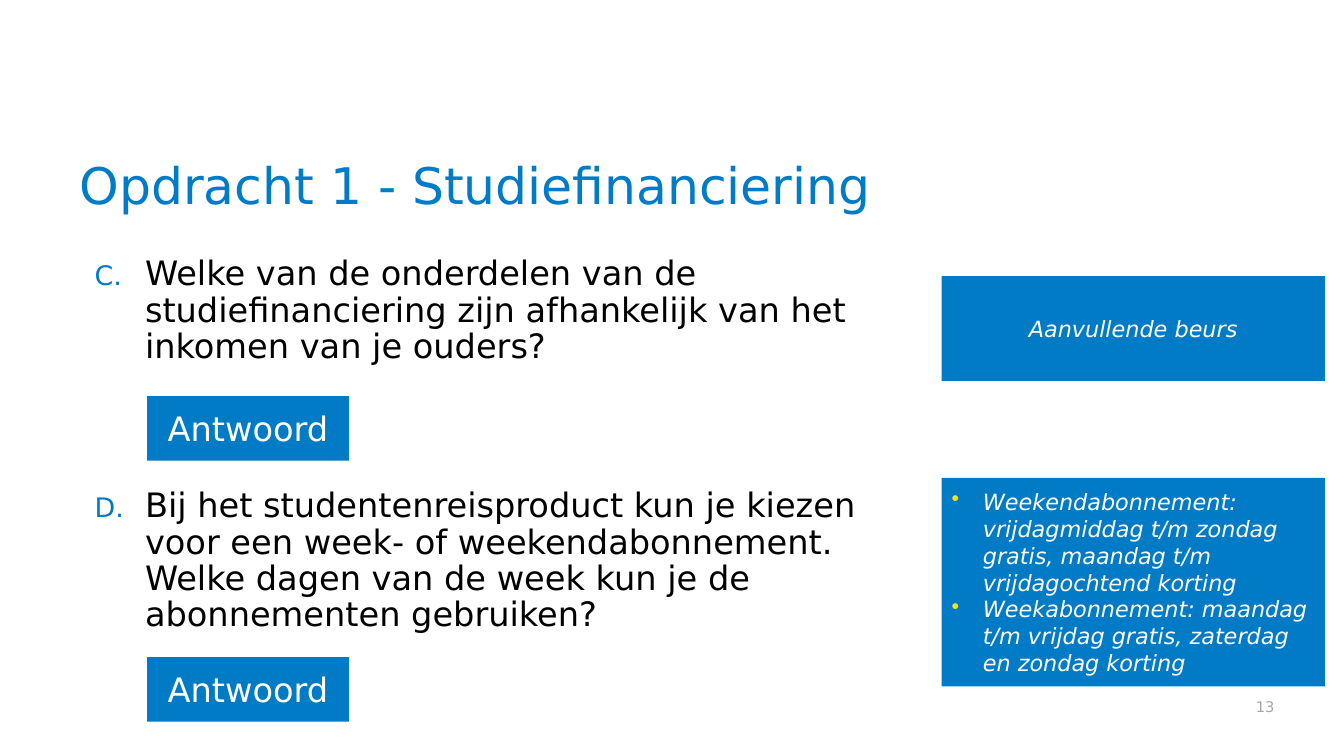
from lxml import etree
from pptx import Presentation
from pptx.dml.color import RGBColor
from pptx.enum.shapes import MSO_SHAPE
from pptx.enum.text import MSO_ANCHOR, PP_ALIGN
from pptx.oxml.ns import qn
from pptx.util import Inches, Pt

RECTANGLE = MSO_SHAPE.RECTANGLE
TOP, MIDDLE, BOTTOM = MSO_ANCHOR.TOP, MSO_ANCHOR.MIDDLE, MSO_ANCHOR.BOTTOM
LEFT, CENTER, RIGHT = PP_ALIGN.LEFT, PP_ALIGN.CENTER, PP_ALIGN.RIGHT

BLUE = RGBColor(0x01, 0x7B, 0xC6)
TITLE_BLUE = RGBColor(0x00, 0x7B, 0xC7)
YELLOW = RGBColor(0xF9, 0xE1, 0x1E)
GREY = RGBColor(0xA6, 0xA6, 0xA6)
BLACK = RGBColor(0x00, 0x00, 0x00)
WHITE = RGBColor(0xFF, 0xFF, 0xFF)
FONT = "DejaVu Sans"

QUESTIONS = [
    "Welke van de onderdelen van de studiefinanciering zijn afhankelijk van "
    "het inkomen van je ouders?",
    "Bij het studentenreisproduct kun je kiezen voor een week- of "
    "weekendabonnement. Welke dagen van de week kun je de abonnementen gebruiken?",
]
SUBSCRIPTIONS = [
    "Weekendabonnement: vrijdagmiddag t/m zondag gratis, maandag t/m "
    "vrijdagochtend korting",
    "Weekabonnement: maandag t/m vrijdag gratis, zaterdag en zondag korting",
]


def add_marker(paragraph, color, indent, hanging, tag, size=100, **attributes):
    """Give a paragraph a hanging bullet or number."""
    properties = paragraph._p.get_or_add_pPr()
    properties.set("marL", str(Inches(indent)))
    properties.set("indent", str(-Inches(hanging)))
    marker_color = etree.SubElement(properties, qn("a:buClr"))
    etree.SubElement(marker_color, qn("a:srgbClr"), val=str(color))
    etree.SubElement(properties, qn("a:buSzPct"), val=str(size * 1000))
    etree.SubElement(properties, qn(tag), **attributes)


def write(frame, lines, size, color, align=LEFT, anchor=TOP, italic=False,
          spacing=None, gap=0, marker=None):
    frame.word_wrap = True
    frame.vertical_anchor = anchor
    for index, line in enumerate(lines):
        paragraph = frame.add_paragraph() if index else frame.paragraphs[0]
        paragraph.text = line
        if marker:
            add_marker(paragraph, **marker)
        paragraph.alignment = align
        paragraph.line_spacing = spacing
        if index and gap:
            paragraph.space_before = Pt(gap)
        font = paragraph.font
        font.name, font.size, font.italic = FONT, Pt(size), italic
        font.color.rgb = color


def add_text(slide, left, top, width, height, lines, size, color, **style):
    box = slide.shapes.add_textbox(
        Inches(left), Inches(top), Inches(width), Inches(height))
    write(box.text_frame, lines, size, color, **style)
    return box


def add_panel(slide, left, top, width, height, lines, size, **style):
    panel = slide.shapes.add_shape(
        RECTANGLE, Inches(left), Inches(top), Inches(width), Inches(height))
    panel.shadow.inherit = False
    panel.fill.solid()
    panel.fill.fore_color.rgb = BLUE
    panel.line.fill.background()
    write(panel.text_frame, lines, size, WHITE, anchor=MIDDLE, **style)


def main():
    presentation = Presentation()
    presentation.slide_width = Inches(13.33)
    presentation.slide_height = Inches(7.5)
    slide = presentation.slides.add_slide(presentation.slide_layouts[6])

    # Title
    add_text(slide, 0.69, 1.15, 11.95, 1.04, ["Opdracht 1 - Studiefinanciering"],
             36, TITLE_BLUE, anchor=BOTTOM, spacing=0.9)

    # Questions, lettered from C, with room for a button between them
    letters = dict(color=BLUE, indent=0.65, hanging=0.5, tag="a:buAutoNum",
                   size=80, type="alphaUcPeriod", startAt="3")
    add_text(slide, 0.69, 2.5, 8.65, 4.3, QUESTIONS, 24, BLACK,
             spacing=0.9, gap=88, marker=letters)

    # Answer buttons
    for top in (3.93, 6.52):
        add_panel(slide, 1.46, top, 2, 0.64, ["Antwoord"], 24, align=CENTER)

    # Answers
    add_panel(slide, 9.34, 2.74, 3.8, 1.04, ["Aanvullende beurs"], 16,
              align=CENTER, italic=True)
    bullets = dict(color=YELLOW, indent=0.31, hanging=0.31, tag="a:buChar", char="•")
    add_panel(slide, 9.34, 4.74, 3.8, 2.07, SUBSCRIPTIONS, 16,
              italic=True, marker=bullets)

    # Slide number
    number = add_text(slide, 7.17, 6.8, 5.47, 0.35, ["13"], 10.5, GREY,
                      align=RIGHT, anchor=BOTTOM)
    number.text_frame.margin_right = 0

    presentation.save("out.pptx")


if __name__ == "__main__":
    main()
